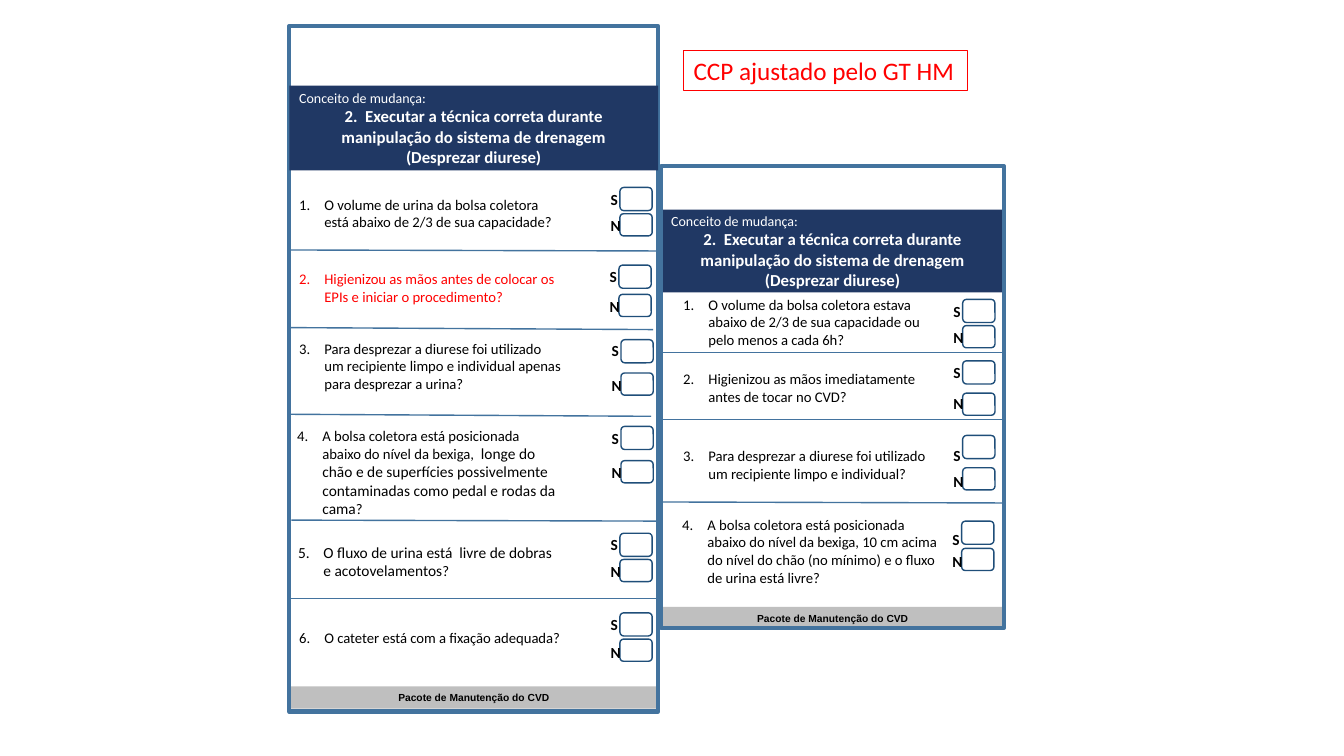
from dataclasses import dataclass

from lxml import etree
from pptx import Presentation
from pptx import util as u
from pptx.dml.color import RGBColor
from pptx.enum import shapes, text
from pptx.oxml import ns

COLORS = {"frame": "43739E", "box": "1F4E79", "header": "203864", "footer": "BFBFBF",
          "white": "FFFFFF", "black": "000000", "red": "FF0000"}
COLUMNS, ROWS = 133.33, 75
SLIDE_WIDTH, SLIDE_HEIGHT = u.Inches(13.33), u.Inches(7.5)


@dataclass
class Question:
    """One numbered question: runs, text area, tops of boxes and letters."""
    runs: list
    top: float
    height: float
    boxes: tuple
    letters: tuple
    box_left: float
    color: str = "black"
    shift: float = 0


@dataclass
class Panel:
    """One checklist card with its bands, questions and dividers."""
    left: float
    top: float
    width: float
    height: float
    header_top: float
    header_height: float
    footer_top: float
    text_left: float
    questions: list
    dividers: list


LEFT = Panel(28.7, 2.6, 36.6, 68, 8.5, 8.4, 68.1, 28.7, [
    Question([("O volume de urina da bolsa coletora está abaixo de 2/3 de sua capacidade?", 10.5)],
             18.6, 5.1, (18.6, 21.2), (18.9, 21.7), 61.5),
    Question([("Higienizou as mãos antes de colocar os EPIs e iniciar o procedimento?", 10.5)],
             26, 5.1, (26.3, 29.2), (26.6, 29.7), 61.4, "red"),
    Question([("Para desprezar a diurese foi utilizado um recipiente limpo e individual "
               "apenas para desprezar a urina?", 10.5)],
             33.5, 5.6, (33.7, 37), (33.9, 37.5), 61.6),
    Question([("A bolsa coletora está posicionada abaixo do nível da bexiga, ", 10.5),
              (" longe do chão e de superfícies possivelmente contaminadas "
               "como pedal e rodas da cama", 11), ("?", 10.5)],
             42.7, 8.3, (42.3, 45.7), (42.6, 46.2), 61.6, shift=-0.2),
    Question([("O fluxo de urina está  livre de dobras e acotovelamentos", 11), ("?", 10.5)],
             52.9, 5.6, (52.9, 55.5), (53.2, 56), 61.5, shift=-0.1),
    Question([("O cateter está com a fixação adequada?", 10.5)],
             60.7, 5.1, (60.8, 63.4), (61.1, 64), 61.5),
], [(28.5, 24.8, 65.2, 24.9), (28.7, 32.5, 64.8, 32.7), (28.7, 41.1, 64.6, 41.3),
    (28.9, 51.6, 65.6, 51.7), (28.5, 59.4, 65.2, 59.4)])

RIGHT = Panel(65.6, 16.5, 34, 45.8, 20.8, 8.2, 60.2, 66.8, [
    Question([("O volume da bolsa coletora estava abaixo de 2/3 de sua capacidade "
               "ou pelo menos a cada 6h?", 10.5)],
             29.4, 5.1, (29.7, 32.3), (30, 32.8), 95.5),
    Question([("Higienizou as mãos imediatamente antes de tocar no CVD?", 10.5)],
             35.9, 5.1, (35.8, 39), (36.1, 39.3), 95.5),
    Question([("Para desprezar a diurese foi utilizado um recipiente limpo e individual?", 10.5)],
             43.3, 5.6, (43.2, 46.4), (44.3, 47.1), 95.5),
    Question([("A bolsa coletora está posicionada abaixo do nível da bexiga, 10 cm acima "
               "do nível do chão (no mínimo) e o fluxo de urina está livre?", 10.5)],
             50.5, 8.3, (51.7, 54.4), (52.7, 55), 95.4, shift=-0.1),
], [(65.6, 35, 99.5, 35), (65.7, 41.6, 99.6, 41.6), (65.6, 49.8, 99.5, 49.9)])


def column(count):
    """Return the length of a number of grid columns."""
    return round(SLIDE_WIDTH * count / COLUMNS)


def row(count):
    """Return the length of a number of grid rows."""
    return round(SLIDE_HEIGHT * count / ROWS)


def area(left, top, width, height):
    """Return a grid area as slide lengths."""
    return column(left), row(top), column(width), row(height)


def color(name):
    """Return a named colour."""
    return RGBColor.from_string(COLORS[name])


def style(paragraph, size, name, bold=False, family="Calibri", alignment=text.PP_ALIGN.LEFT):
    """Format a whole paragraph."""
    font = paragraph.font
    font.size, font.bold, font.name = u.Pt(size), bold, family
    font.color.rgb = color(name)
    paragraph.alignment = alignment


def add_box(slide, place, kind=shapes.MSO_SHAPE.RECTANGLE, fill=None, line=None, width=1):
    """Add a flat shape with an optional fill and line."""
    shape = slide.shapes.add_shape(kind, *area(*place))
    shape.shadow.inherit = False
    if fill:
        shape.fill.solid()
        shape.fill.fore_color.rgb = color(fill)
    else:
        shape.fill.background()
    if line:
        shape.line.color.rgb = color(line)
        shape.line.width = u.Pt(width)
    else:
        shape.line.fill.background()
    return shape


def add_text(slide, place):
    """Add a wrapped, vertically centred text box and return its frame."""
    frame = slide.shapes.add_textbox(*area(*place)).text_frame
    frame.word_wrap = True
    frame.vertical_anchor = text.MSO_ANCHOR.MIDDLE
    return frame


def add_header(slide, panel):
    """Add the dark band that names the change concept."""
    place = panel.left, panel.header_top, panel.width, panel.header_height
    frame = add_box(slide, place, fill="header").text_frame
    frame.text = ("Conceito de mudança:\n2.  Executar a técnica correta durante manipulação "
                  "do sistema de drenagem\n(Desprezar diurese)")
    label, *titles = frame.paragraphs
    style(label, 10, "white")
    for title in titles:
        style(title, 12, "white", True, alignment=text.PP_ALIGN.CENTER)


def add_footer(slide, panel):
    """Add the grey band at the foot of a panel."""
    place = panel.left, panel.footer_top, panel.width, 2.2
    frame = add_box(slide, place, fill="footer").text_frame
    frame.text = "Pacote de Manutenção do CVD"
    style(frame.paragraphs[0], 7.3, "black", True, "Arial", text.PP_ALIGN.CENTER)


def add_frame(slide, panel):
    """Add the outline of a panel."""
    add_box(slide, (panel.left, panel.top, panel.width, panel.height), line="frame", width=3)


def add_divider(slide, left, top, right, bottom):
    """Add a thin line between two questions."""
    line = slide.shapes.add_connector(shapes.MSO_CONNECTOR.STRAIGHT, column(left), row(top),
                                      column(right), row(bottom))
    line.line.color.rgb = color("frame")
    line.line.width = u.Pt(1)
    etree.SubElement(line._element.spPr, ns.qn("a:effectLst"))


def add_question(slide, panel, number, question):
    """Add a numbered question with its S and N answer boxes."""
    place = panel.text_left + question.shift, question.top, 28, question.height
    paragraph = add_text(slide, place).paragraphs[0]
    properties = paragraph._p.get_or_add_pPr()
    properties.set("marL", str(u.Inches(0.25)))
    properties.set("indent", str(-u.Inches(0.25)))
    etree.SubElement(properties, ns.qn("a:buAutoNum"), type="arabicPeriod", startAt=str(number))
    style(paragraph, question.runs[0][1], question.color)
    for words, size in question.runs:
        run = paragraph.add_run()
        run.text = words
        if len(question.runs) > 1:
            run.font.size = u.Pt(size)
    answers = zip("SN", question.boxes, question.letters, (2.3, 2.2), (1.7, 1.4))
    for letter, box_top, letter_top, box_height, letter_height in answers:
        add_box(slide, (question.box_left, box_top, 3.2, box_height),
                shapes.MSO_SHAPE.ROUNDED_RECTANGLE, line="box")
        frame = add_text(slide, (question.box_left - 1.9, letter_top, 2.4, letter_height))
        frame.text = letter
        style(frame.paragraphs[0], 11, "black", True, alignment=text.PP_ALIGN.CENTER)


def add_title(slide):
    """Place the red outlined title."""
    title = slide.shapes.title
    title.left, title.top, title.width, title.height = area(67.8, 5, 28.2, 4)
    title.line.color.rgb = color("red")
    title.line.width = u.Pt(0.75)
    frame = title.text_frame
    frame.text = "CCP ajustado pelo GT HM"
    frame.word_wrap = False
    frame.auto_size = text.MSO_AUTO_SIZE.NONE
    frame.vertical_anchor = text.MSO_ANCHOR.TOP
    style(frame.paragraphs[0], 18, "red")


def main():
    """Build the slide with both checklist panels."""
    presentation = Presentation()
    presentation.slide_width, presentation.slide_height = SLIDE_WIDTH, SLIDE_HEIGHT
    slide = presentation.slides.add_slide(presentation.slide_layouts[5])
    add_title(slide)
    add_header(slide, RIGHT)
    for panel in (LEFT, RIGHT):
        add_footer(slide, panel)
        add_frame(slide, panel)
        for divider in panel.dividers:
            add_divider(slide, *divider)
        for number, question in enumerate(panel.questions, 1):
            add_question(slide, panel, number, question)
    add_header(slide, LEFT)
    presentation.save("out.pptx")


if __name__ == "__main__":
    main()
